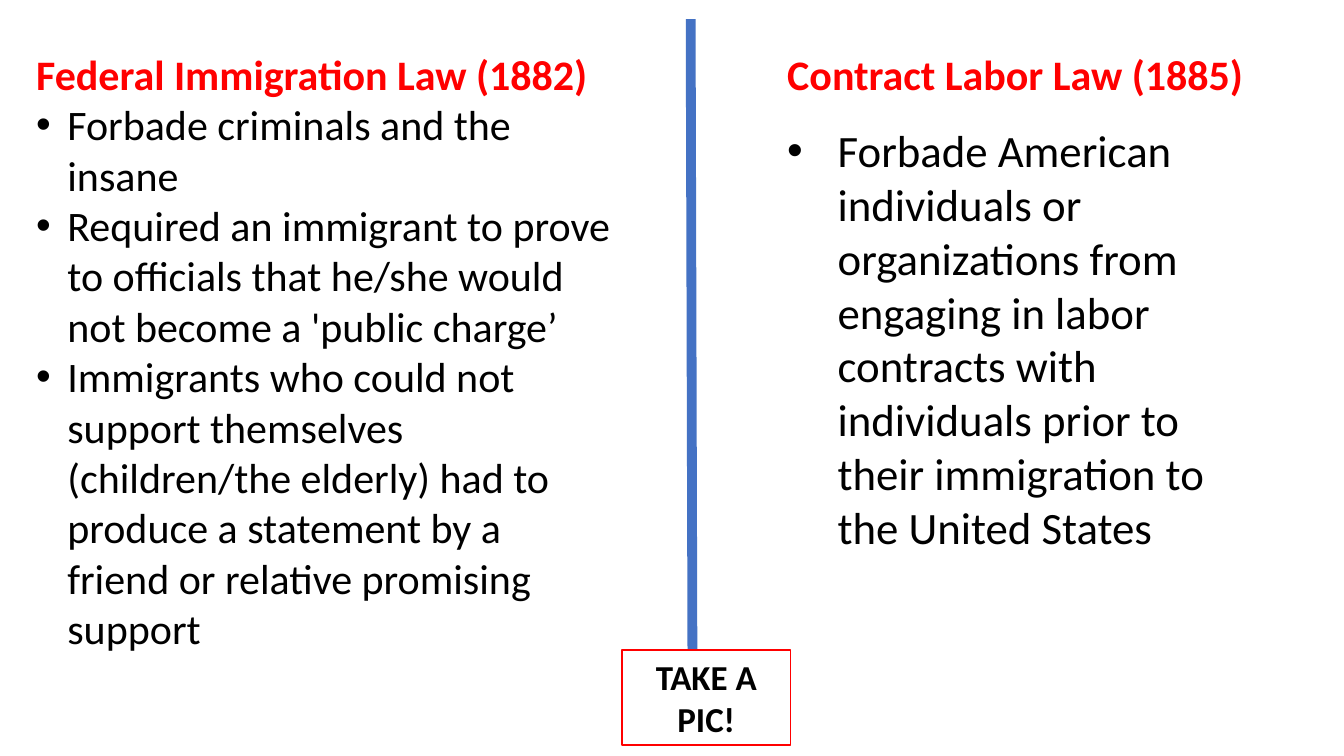
from lxml.etree import SubElement
from pptx import Presentation
from pptx.dml.color import RGBColor
from pptx.enum.shapes import MSO_CONNECTOR, MSO_SHAPE
from pptx.enum.text import MSO_ANCHOR, PP_ALIGN
from pptx.oxml.ns import qn
from pptx.util import Inches, Pt

COLORS = {"heading": "FF0000", "body": "000000", "divider": "4472C4", "paper": "FFFFFF"}
FONT = "Calibri"


def color(name):
    return RGBColor.from_string(COLORS[name])


def add_text(tf, text, size=30, fill="body", bold=False, align=PP_ALIGN.LEFT, indent=0):
    p = tf.paragraphs[0]
    if p.runs:
        p = tf.add_paragraph()
    p.alignment = align
    if indent:
        pPr = p._p.get_or_add_pPr()
        pPr.set("marL", str(Inches(indent)))
        pPr.set("indent", str(-Inches(indent)))
        SubElement(pPr, qn("a:buFont"), typeface="Arial")
        SubElement(pPr, qn("a:buChar"), char="•")
    r = p.add_run()
    r.text = text
    r.font.name = FONT
    r.font.size = Pt(size)
    r.font.bold = bold
    r.font.color.rgb = color(fill)


def add_box(s, x, y, w, h, wrap=True):
    tf = s.shapes.add_textbox(Inches(x), Inches(y), Inches(w), Inches(h)).text_frame
    tf.word_wrap = wrap
    return tf


def add_federal_law(s, x, y, w, h):
    tf = add_box(s, x, y, w, h)
    add_text(tf, "Federal Immigration Law (1882)", fill="heading", bold=True)
    for point in (
        "Forbade criminals and the insane",
        "Required an immigrant to prove to officials that he/she would not become a 'public charge’",
        "Immigrants who could not support themselves (children/the elderly) had to produce "
        "a statement by a friend or relative promising support",
    ):
        add_text(tf, point, indent=0.31)


def add_contract_law(s, x, y, w, h):
    heading = add_box(s, x, y, w, 0.61, wrap=False)
    add_text(heading, "Contract Labor Law (1885)", fill="heading", bold=True)
    body = add_box(s, x, y + 0.74, w - 0.36, h - 0.74)
    add_text(
        body,
        "Forbade American individuals or organizations from engaging in labor contracts "
        "with individuals prior to their immigration to the United States",
        size=32,
        indent=0.5,
    )


def add_divider(s, x, y, w, h):
    line = s.shapes.add_connector(
        MSO_CONNECTOR.STRAIGHT, Inches(x), Inches(y), Inches(x + w), Inches(y + h)
    )
    line.line.color.rgb = color("divider")
    line.line.width = Pt(7)
    SubElement(line._element.spPr, qn("a:effectLst"))


def add_reminder(s, x, y, w, h):
    sp = s.shapes.add_shape(MSO_SHAPE.RECTANGLE, Inches(x), Inches(y), Inches(w), Inches(h))
    sp.shadow.inherit = False
    sp.fill.solid()
    sp.fill.fore_color.rgb = color("paper")
    sp.line.color.rgb = color("heading")
    sp.line.width = Pt(1)
    tf = sp.text_frame
    tf.word_wrap = True
    tf.vertical_anchor = MSO_ANCHOR.TOP
    add_text(tf, "TAKE A PIC!", size=25, bold=True, align=PP_ALIGN.CENTER)


def main():
    prs = Presentation()
    prs.slide_width, prs.slide_height = Inches(13.33), Inches(7.5)
    s = prs.slides.add_slide(prs.slide_layouts[6])
    add_federal_law(s, 0.26, 0.43, 5.91, 6.66)
    add_contract_law(s, 7.71, 0.43, 5.16, 5.15)
    add_divider(s, 6.85, 0.19, 0.02, 7.07)
    add_reminder(s, 6.17, 6.45, 1.67, 0.94)
    prs.save("out.pptx")


if __name__ == "__main__":
    main()
